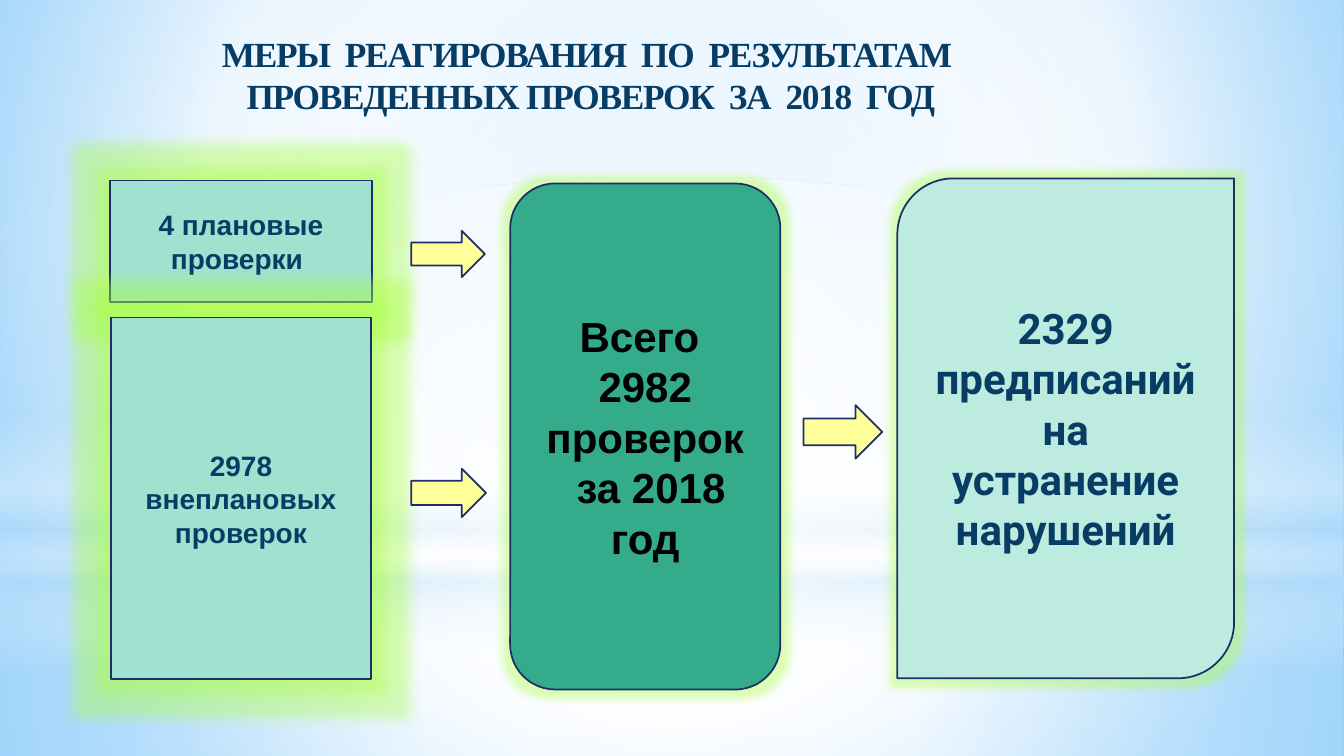
from lxml import etree
from pptx import Presentation
from pptx.dml.color import RGBColor
from pptx.enum.shapes import MSO_SHAPE
from pptx.enum.text import MSO_ANCHOR, PP_ALIGN
from pptx.oxml.ns import qn
from pptx.util import Inches, Pt

RECT, ROUND, DIAGONAL = MSO_SHAPE.RECTANGLE, MSO_SHAPE.ROUNDED_RECTANGLE, MSO_SHAPE.ROUND_2_DIAG_RECTANGLE
ARROW, ELLIPSE = MSO_SHAPE.RIGHT_ARROW, MSO_SHAPE.OVAL
CENTER, TOP, MIDDLE = PP_ALIGN.CENTER, MSO_ANCHOR.TOP, MSO_ANCHOR.MIDDLE
WIDTH, HEIGHT = 13.33, 7.5

COLORS = {"navy": "073C65", "outline": "1F2E69", "mint": "9EE2CF", "green": "34AC8B",
          "pale": "BEEBDF", "yellow": "FFFF99", "black": "000000", "glow": "AAFF44",
          "white": "FFFFFF", "haze": "B4DCFA", "sky": "9ED5FF", "deep_sky": "5BB9FF"}

# \v breaks the line inside the paragraph
TITLE = "МЕРЫ  РЕАГИРОВАНИЯ  ПО  РЕЗУЛЬТАТАМ \vПРОВЕДЕННЫХ ПРОВЕРОК  ЗА  2018  ГОД"
TITLE_BOX = (0.72, 0.27, 10.28, 0.76)

# Gradient stops: position %, colour, opacity %
SKY = [(0, "sky", 100), (60, "white", 100), (100, "deep_sky", 100)]
CENTRE = (50, 50, 50, 50)
HORIZON = 5.58
BACKDROP = [
    (RECT, (0, HORIZON, WIDTH, HEIGHT - HORIZON),
     [(0, "white", 91), (37, "white", 76), (100, "haze", 79)], CENTRE),
    (RECT, (0, 0, WIDTH, HORIZON),
     [(0, "white", 89), (48, "white", 62), (100, "haze", 79)], CENTRE),
    (RECT, (0, 4.12, WIDTH, 2.5),
     [(0, "white", 0), (29, "white", 30), (45, "haze", 40), (55, "white", 26),
      (65, "haze", 60), (100, "white", 0)], None),
    (ELLIPSE, (0, 1.75, WIDTH, HORIZON), [(0, "white", 100), (56, "white", 0)], CENTRE),
]

# Shape, box, fill, glow radius in points, paragraphs, text format
PANELS = [
    (RECT, (1.09, 1.79, 2.6, 1.21), "mint", 18, ["4 плановые проверки "], {"size": 20}),
    (RECT, (1.1, 3.15, 2.58, 3.59), "mint", 18, ["2978 внеплановых проверок"], {"size": 20}),
    (ROUND, (5.06, 1.82, 2.68, 5.02), "green", 11,
     ["Всего ", "2982", "проверок", " за 2018 год"], {"size": 30, "color": "black"}),
    (DIAGONAL, (8.9, 1.77, 3.34, 4.96), "pale", 11,
     ["2329 предписаний на устранение нарушений"], {"size": 30, "font": "Roboto", "before": 15}),
]
ARROWS = [(4.08, 2.29, 0.73, 0.46), (4.08, 4.65, 0.74, 0.48), (7.97, 4.02, 0.78, 0.53)]


def rgb(name):
    return RGBColor.from_string(COLORS[name])


def add_color(parent, name, opacity):
    color = etree.SubElement(parent, qn("a:srgbClr"), val=COLORS[name])
    if opacity < 100:
        etree.SubElement(color, qn("a:alpha"), val=str(opacity * 1000))


def set_gradient(fill, holder, stops, focus):
    """Fill with a circular gradient around focus (l, t, r, b in %), or a vertical one."""
    fill.gradient()
    gradient = holder.find(qn("a:gradFill"))
    for child in list(gradient):
        gradient.remove(child)
    stop_list = etree.SubElement(gradient, qn("a:gsLst"))
    for position, name, opacity in stops:
        add_color(etree.SubElement(stop_list, qn("a:gs"), pos=str(position * 1000)), name, opacity)
    if focus:
        circle = etree.SubElement(gradient, qn("a:path"), attrib={"path": "circle"})
        etree.SubElement(circle, qn("a:fillToRect"),
                         attrib={side: str(share * 1000) for side, share in zip("ltrb", focus)})
    else:
        etree.SubElement(gradient, qn("a:lin"), ang="5400000", scaled="0")


def add_glow(shape, radius):
    effects = shape._element.spPr.find(qn("a:effectLst"))
    add_color(etree.SubElement(effects, qn("a:glow"), rad=str(Pt(radius))), "glow", 40)


def write(shape, paragraphs, size, font="Arial", color="navy", anchor=MIDDLE, before=0, spacing=0):
    frame = shape.text_frame
    frame.word_wrap = True
    frame.vertical_anchor = anchor
    frame.text = "\n".join(paragraphs)
    for paragraph in frame.paragraphs:
        paragraph.alignment = CENTER
        paragraph.space_before = Pt(before)
        for run in paragraph.runs:
            run.font.size, run.font.name, run.font.bold = Pt(size), font, True
            run.font.color.rgb = rgb(color)
            if spacing:
                run._r.get_or_add_rPr().set("spc", str(round(spacing * 100)))


def add_shape(slide, kind, box):
    shape = slide.shapes.add_shape(kind, *map(Inches, box))
    shape.shadow.inherit = False
    return shape


def add_outlined(slide, kind, box, fill):
    shape = add_shape(slide, kind, box)
    shape.fill.solid()
    shape.fill.fore_color.rgb = rgb(fill)
    shape.line.color.rgb = rgb("outline")
    shape.line.width = Pt(1.25)
    return shape


def main():
    deck = Presentation()
    deck.slide_width, deck.slide_height = Inches(WIDTH), Inches(HEIGHT)
    slide = deck.slides.add_slide(deck.slide_layouts[5])

    sky = slide.background.fill
    sky.solid()
    set_gradient(sky, slide._element.cSld.find(qn("p:bg")).find(qn("p:bgPr")), SKY, (20, 10, 20, 60))
    for kind, box, stops, focus in BACKDROP:
        layer = add_shape(slide, kind, box)
        layer.line.fill.background()
        set_gradient(layer.fill, layer._element.spPr, stops, focus)

    title = slide.shapes.title
    title.left, title.top, title.width, title.height = map(Inches, TITLE_BOX)
    write(title, [TITLE], 25.2, font="Times New Roman", anchor=TOP, spacing=-0.9)
    slide.shapes._spTree.append(title._element)  # brings the title above the backdrop

    for kind, box, fill, glow, paragraphs, text_format in PANELS:
        panel = add_outlined(slide, kind, box, fill)
        add_glow(panel, glow)
        write(panel, paragraphs, **text_format)
    for box in ARROWS:
        add_outlined(slide, ARROW, box, "yellow")

    deck.save("out.pptx")


if __name__ == "__main__":
    main()
